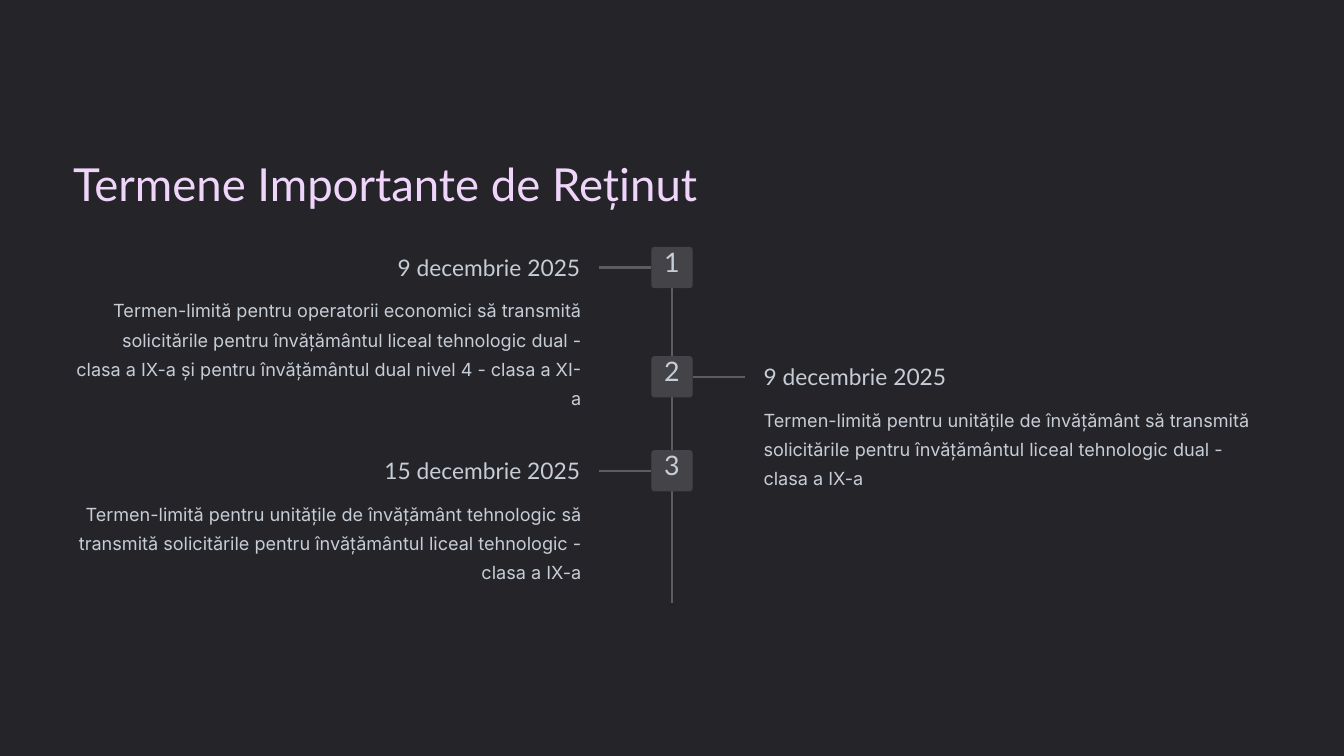
"""Builds a dark timeline slide with three deadlines."""
import pptx
import pptx.util
import pptx.dml.color
import pptx.enum.shapes
import pptx.enum.text
import pptx.oxml

Inches = pptx.util.Inches
Pt = pptx.util.Pt
Align = pptx.enum.text.PP_ALIGN
Shape = pptx.enum.shapes.MSO_SHAPE
Link = pptx.enum.shapes.MSO_CONNECTOR


def paint(item, tone):
    """Set a fill or line to a solid hex colour."""
    item.solid()
    item.fore_color.rgb = pptx.dml.color.RGBColor.from_string(tone)


class Deck:
    """Holds the style and the current slide."""

    dark, box, rule, ink, pink = "242429", "434348", "5C5C61", "C7CDD6", "EFD5FA"
    head, body = "Lato", "Inter"
    side, mid = 0.49, 8

    def __init__(self):
        """Start a one-slide deck."""
        self.file = pptx.Presentation()
        self.file.slide_width = Inches(16)
        self.file.slide_height = Inches(9)
        self.slide = self.file.slides.add_slide(self.file.slide_layouts[5])
        paint(self.slide.background.fill, self.dark)

    def words(self, shape, text, size, lead, font, tone, align, top=0):
        """Fill a shape with one styled paragraph."""
        frame = shape.text_frame
        frame.text = text
        frame.word_wrap = True
        frame.auto_size = pptx.enum.text.MSO_AUTO_SIZE.NONE
        frame.vertical_anchor = pptx.enum.text.MSO_ANCHOR.TOP
        frame.margin_left = frame.margin_right = frame.margin_bottom = 0
        frame.margin_top = Inches(top)
        line = frame.paragraphs[0]
        line.alignment = align
        line.line_spacing = Pt(lead)
        for run in line.runs:
            run.font.size = Pt(size)
            run.font.name = font
            paint(run.font.fill, tone)

    def title(self, text):
        """Place and format the title."""
        shape = self.slide.shapes.title
        shape.left, shape.top = Inches(0.87), Inches(1.83)
        shape.width, shape.height = Inches(7.92), Inches(0.68)
        self.words(shape, text, 39, 48.5, self.head, self.pink, Align.LEFT)

    def label(self, x, y, w, h, text, *style):
        """Add a text box."""
        shape = self.slide.shapes.add_textbox(*map(Inches, (x, y, w, h)))
        self.words(shape, text, *style)

    def line(self, x1, y1, x2, y2):
        """Add a straight rule."""
        line = self.slide.shapes.add_connector(
            Link.STRAIGHT, *map(Inches, (x1, y1, x2, y2)))
        paint(line.line.fill, self.rule)
        line.line.width = Pt(2)
        props = line._element.spPr
        props.append(pptx.oxml.parse_xml(
            '<a:effectLst xmlns:a="http://schemas.openxmlformats.org/drawingml/2006/main"/>'))
        return line

    def badge(self, y, text):
        """Add a numbered square on the spine."""
        shape = self.slide.shapes.add_shape(
            Shape.ROUNDED_RECTANGLE, Inches(self.mid - self.side / 2),
            Inches(y), Inches(self.side), Inches(self.side))
        shape.adjustments[0] = 0.07
        shape.shadow.inherit = False
        paint(shape.fill, self.box)
        shape.line.fill.background()
        self.words(shape, text, 23, 23, self.head, self.ink, Align.CENTER, 0.04)
        return shape

    def event(self, y, num, date, text, tall, right):
        """Add a badge, its stem, a date and a description."""
        end, site = (8.87, 3) if right else (7.13, 1)
        half = y + self.side / 2
        stem = self.line(self.mid, half, end, half)
        badge = self.badge(y, num)
        stem.begin_connect(badge, site)
        align = Align.LEFT if right else Align.RIGHT
        self.label(9.09 if right else 4.2, y + 0.07, 2.71, 0.34, date,
                   19.5, 24, self.head, self.ink, align)
        self.label(9.09 if right else 0.87, y + 0.54, 6.05, tall, text,
                   15.5, 25, self.body, self.ink, align)
        return badge


def main():
    """Build and save the slide."""
    deck = Deck()
    deck.title("Termene Importante de Reținut")
    spine = deck.line(deck.mid, 2.94, deck.mid, 7.18)
    events = [
        (2.94, "9 decembrie 2025",
         "Termen-limită pentru operatorii economici să transmită solicitările "
         "pentru învățământul liceal tehnologic dual - clasa a IX-a și pentru "
         "învățământul dual nivel 4 - clasa a XI-a", 1.39),
        (4.24, "9 decembrie 2025",
         "Termen-limită pentru unitățile de învățământ să transmită solicitările "
         "pentru învățământul liceal tehnologic dual - clasa a IX-a", 1.04),
        (5.36, "15 decembrie 2025",
         "Termen-limită pentru unitățile de învățământ tehnologic să transmită "
         "solicitările pentru învățământul liceal tehnologic - clasa a IX-a", 1.04),
    ]
    badges = [deck.event(y, str(i + 1), date, text, tall, i % 2 == 1)
              for i, (y, date, text, tall) in enumerate(events)]
    spine.begin_connect(badges[0], 0)
    deck.file.save("out.pptx")


if __name__ == "__main__":
    main()
